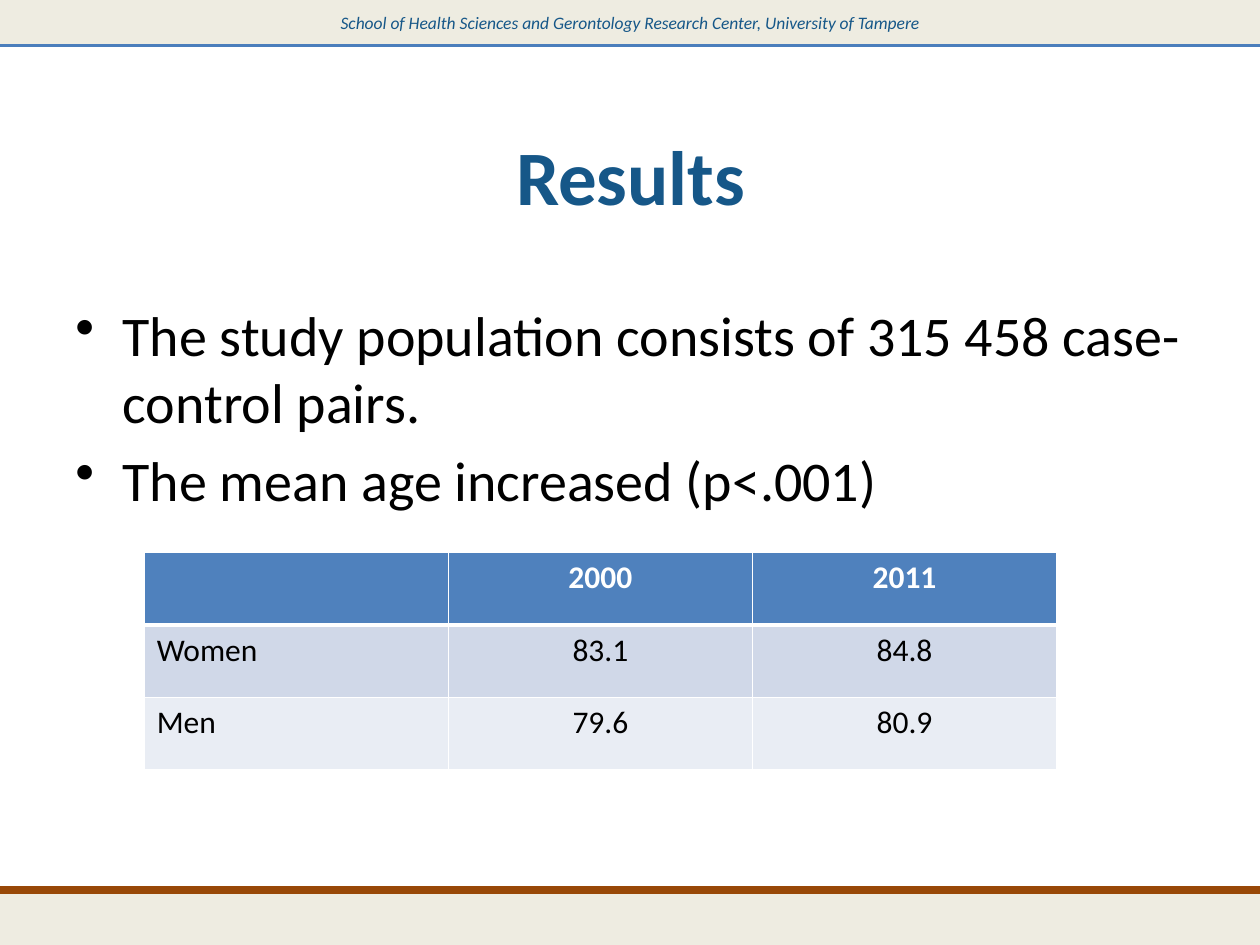
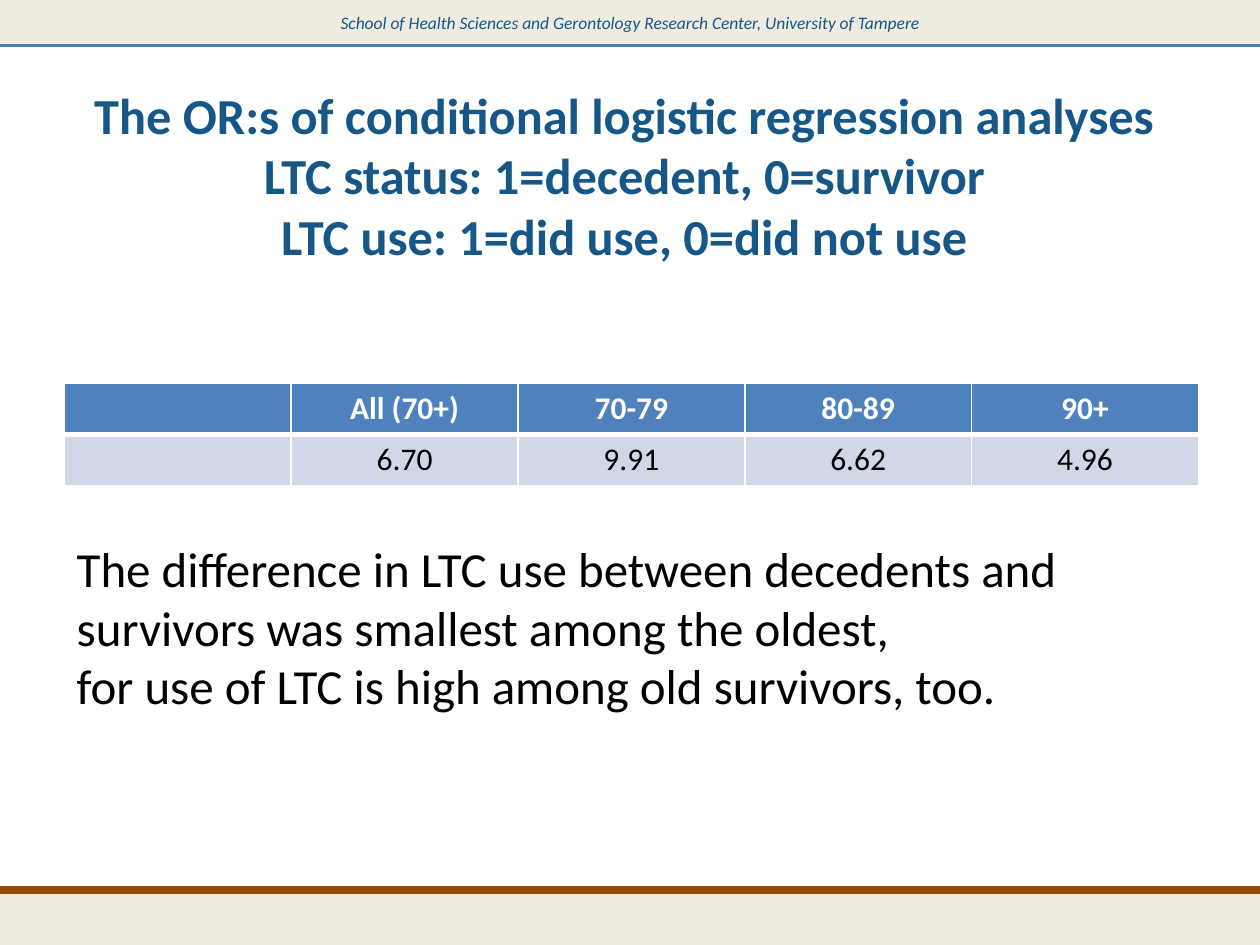
import pptx
import pptx.dml.color
import pptx.enum.shapes
import pptx.enum.text
import pptx.oxml
import pptx.oxml.ns
import pptx.util
from lxml import etree

Pt = pptx.util.Pt
ALIGN = pptx.enum.text.PP_ALIGN
ANCHOR = pptx.enum.text.MSO_ANCHOR
AUTO_SIZE = pptx.enum.text.MSO_AUTO_SIZE

WIDTH, HEIGHT = 720, 540
HEADER_BOTTOM, FOOTER_TOP = 26, 508.5
FONT = "Calibri"
BEIGE, NAVY, BLUE, BROWN = "EEECE1", "165788", "4B7EBC", "984807"
BLACK, WHITE = "000000", "FFFFFF"
HEADER_FILL = "4F81BD"
ROW_FILLS = ["D0D8E8", "E9EDF4"]
AFFILIATION = "School of Health Sciences and Gerontology Research Center, University of Tampere"


def color(code):
    """Turn a hex string into a colour."""
    return pptx.dml.color.RGBColor.from_string(code)


def style(para, size, code, bold=False, italic=False, align=ALIGN.LEFT):
    """Set the font and alignment of a paragraph."""
    para.alignment = align
    font = para.font
    font.name, font.size = FONT, Pt(size)
    font.bold, font.italic = bold, italic
    font.color.rgb = color(code)


def add_band(page, top, height):
    """Draw a full-width beige band."""
    band = page.shapes.add_shape(
        pptx.enum.shapes.MSO_SHAPE.RECTANGLE, 0, Pt(top), Pt(WIDTH), Pt(height))
    band.shadow.inherit = False
    band.fill.solid()
    band.fill.fore_color.rgb = color(BEIGE)
    band.line.fill.background()


def add_rule(page, top, code, weight):
    """Draw a full-width horizontal line."""
    rule = page.shapes.add_connector(
        pptx.enum.shapes.MSO_CONNECTOR.STRAIGHT, 0, Pt(top), Pt(WIDTH), Pt(top))
    rule.line.color.rgb = color(code)
    rule.line.width = Pt(weight)
    etree.SubElement(rule._element.spPr, pptx.oxml.ns.qn("a:effectLst"))


def add_text(page, place, lines, size, code, wrap=True, anchor=ANCHOR.TOP, **look):
    """Add a text box with one paragraph per line."""
    box = page.shapes.add_textbox(*map(Pt, place))
    frame = box.text_frame
    frame.word_wrap = wrap
    frame.auto_size = AUTO_SIZE.NONE if wrap else AUTO_SIZE.SHAPE_TO_FIT_TEXT
    frame.vertical_anchor = anchor
    frame.text = "\n".join(lines)
    for para in frame.paragraphs:
        style(para, size, code, **look)
    return box


def add_title(page, left, width, text, size):
    """Add the centred slide title."""
    add_text(page, (left, 43.2, width, 113), [text], size, NAVY,
             anchor=ANCHOR.MIDDLE, bold=True, align=ALIGN.CENTER)


def add_bullets(page, place, lines, size):
    """Add a bulleted list with hanging indents."""
    box = add_text(page, place, lines, size, BLACK)
    for para in box.text_frame.paragraphs:
        para.space_before = Pt(size * 0.2)
        properties = para._p.get_or_add_pPr()
        properties.set("marL", str(Pt(27)))
        properties.set("indent", str(-Pt(27)))
        bullet = pptx.oxml.parse_xml(
            f'<a:buChar {pptx.oxml.ns.nsdecls("a")} char="•"/>')
        properties.find(pptx.oxml.ns.qn("a:defRPr")).addprevious(bullet)


def add_borders(cell, bottom):
    """Give a cell white borders, with the bottom weight chosen."""
    for side, weight in (("L", 1), ("R", 1), ("T", 1), ("B", bottom)):
        cell._tc.get_or_add_tcPr().append(pptx.oxml.parse_xml(
            f'<a:ln{side} {pptx.oxml.ns.nsdecls("a")} w="{Pt(weight)}">'
            f'<a:solidFill><a:srgbClr val="{WHITE}"/></a:solidFill></a:ln{side}>'))


def add_data_table(page, left, top, column_width, row_height, rows):
    """Add a table with a blue header row and banded body rows."""
    count = len(rows[0])
    table = page.shapes.add_table(
        len(rows), count, Pt(left), Pt(top),
        Pt(column_width * count), Pt(row_height * len(rows))).table
    for column in table.columns:
        column.width = Pt(column_width)
    for row_number, values in enumerate(rows):
        header = row_number == 0
        table.rows[row_number].height = Pt(row_height)
        for column_number, value in enumerate(values):
            cell = table.cell(row_number, column_number)
            cell.text = value
            style(cell.text_frame.paragraphs[0], 18, WHITE if header else BLACK,
                  bold=header, align=ALIGN.CENTER if column_number else ALIGN.LEFT)
            add_borders(cell, 3 if header or row_number == 0 else 1)
            cell.fill.solid()
            cell.fill.fore_color.rgb = color(
                HEADER_FILL if header else ROW_FILLS[(row_number - 1) % 2])


def add_page(deck):
    """Add a blank page with the shared bands, rules and affiliation."""
    page = deck.slides.add_slide(deck.slide_layouts[6])
    add_band(page, 0, HEADER_BOTTOM)
    add_band(page, FOOTER_TOP, HEIGHT - FOOTER_TOP)
    add_text(page, (0, 3.6, WIDTH, 19.4), [AFFILIATION], 10, NAVY,
             italic=True, align=ALIGN.CENTER)
    add_rule(page, HEADER_BOTTOM, BLUE, 1.5)
    add_rule(page, FOOTER_TOP, BROWN, 4.25)
    return page


def add_results(deck):
    """Build the page on the study population and mean age."""
    page = add_page(deck)
    add_title(page, 36.5, 648, "Results", 44)
    add_bullets(page, (36, 168, 648, 315), [
        "The study population consists of 315 458 case-control pairs.",
        "The mean age increased (p<.001)"], 32)
    add_data_table(page, 82.4, 315.6, 173.8, 41.5, [
        ["", "2000", "2011"],
        ["Women", "83.1", "84.8"],
        ["Men", "79.6", "80.9"]])


def add_regression(deck):
    """Build the page on the odds ratios by age group."""
    page = add_page(deck)
    add_title(page, 2.7, 708.5,
              "The OR:s of conditional logistic regression analyses\v"
              "LTC status: 1=decedent, 0=survivor\v"
              "LTC use: 1=did use, 0=did not use", 28.8)
    add_data_table(page, 36.8, 219, 129.6, 29.2, [
        ["", "All (70+)", "70-79", "80-89", "90+"],
        ["", "6.70", "9.91", "6.62", "4.96"]])
    add_text(page, (36.8, 304, 587.5, 131), [
        "The difference in LTC use between decedents and",
        "survivors was smallest among the oldest,",
        "for use of LTC is high among old survivors, too."], 28, BLACK, wrap=False)


def main():
    """Build and save the deck."""
    deck = pptx.Presentation()
    deck.slide_width, deck.slide_height = Pt(WIDTH), Pt(HEIGHT)
    add_results(deck)
    add_regression(deck)
    deck.save("out.pptx")


if __name__ == "__main__":
    main()
